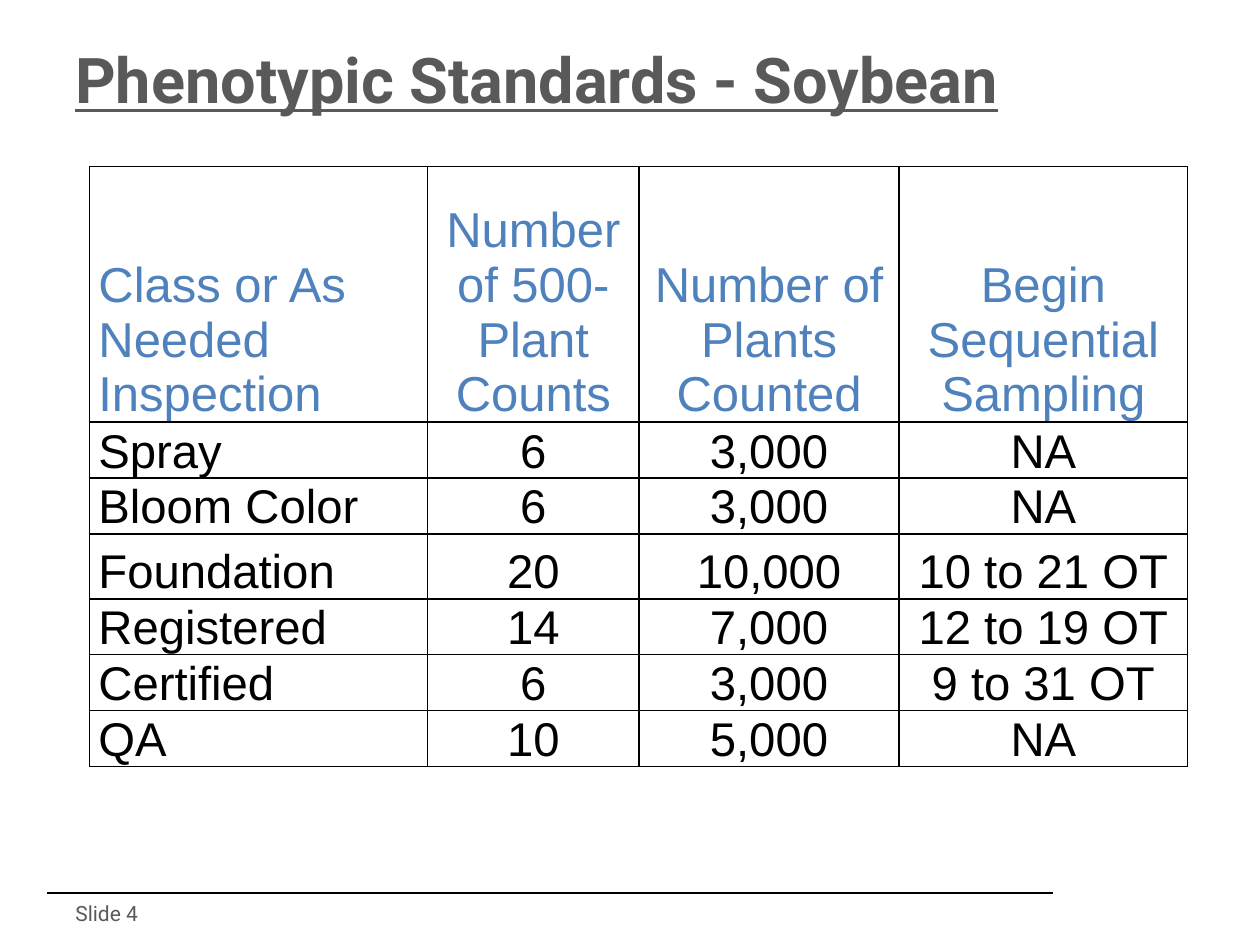
"""Build the soybean phenotypic standards slide."""
from dataclasses import dataclass

import lxml.etree
import pptx
import pptx.dml.color
import pptx.enum.shapes
import pptx.enum.text
import pptx.oxml.ns
import pptx.util

Pt = pptx.util.Pt
qn = pptx.oxml.ns.qn
ALIGN = pptx.enum.text.PP_ALIGN
ANCHOR = pptx.enum.text.MSO_ANCHOR
BLACK, GRAY, BLUE = "000000", "595959", "4F81BD"


@dataclass
class Style:
    font: str
    size: float
    color: str
    bold: bool = False
    underline: bool = False


@dataclass
class Label:
    text: str
    left: float
    top: float
    width: float
    height: float
    anchor: ANCHOR
    style: Style


@dataclass
class Row:
    height: float
    texts: tuple[str, ...]
    style: Style
    top_line: float = 1
    bottom_line: float = 1


HEADER = Style("Arial", 28, BLUE)
BODY = Style("Arial", 27, BLACK)
LABELS = [
    Label("Phenotypic Standards - Soybean", 36, 0, 648, 90, ANCHOR.MIDDLE,
          Style("Roboto", 36, GRAY, True, True)),
    Label("Slide 4", 36, 511.2, 72, 25.2, ANCHOR.TOP, Style("Roboto", 12, GRAY)),
]
COLUMNS = (193, 121, 148.5, 165)
ROWS = [
    Row(146, ("Class or As Needed Inspection", "Number of 500-Plant Counts",
              "Number of Plants Counted", "Begin Sequential Sampling"), HEADER, 1, 1.5),
    Row(32, ("Spray", "6", "3,000", "NA"), BODY, 1.5),
    Row(32, ("Bloom Color", "6", "3,000", "NA"), BODY),
    Row(37, ("Foundation", "20", "10,000", "10 to 21 OT"), BODY),
    Row(32, ("Registered", "14", "7,000", "12 to 19 OT"), BODY),
    Row(32, ("Certified", "6", "3,000", "9 to 31 OT"), BODY),
    Row(32, ("QA", "10", "5,000", "NA"), BODY),
]


def rgb(color: str) -> pptx.dml.color.RGBColor:
    return pptx.dml.color.RGBColor.from_string(color)


def write(tf, text: str, style: Style, align: ALIGN = ALIGN.LEFT) -> None:
    tf.text = text
    tf.word_wrap = True
    p = tf.paragraphs[0]
    p.alignment = align
    font = p.runs[0].font
    font.name, font.size = style.font, Pt(style.size)
    font.bold, font.underline = style.bold, style.underline
    font.color.rgb = rgb(style.color)


def add_label(s, label: Label) -> None:
    sp = s.shapes.add_textbox(Pt(label.left), Pt(label.top), Pt(label.width), Pt(label.height))
    write(sp.text_frame, label.text, label.style)
    sp.text_frame.vertical_anchor = label.anchor


def set_borders(cell, row: Row) -> None:
    tcPr = cell._tc.get_or_add_tcPr()
    widths = {"a:lnL": 1, "a:lnR": 1, "a:lnT": row.top_line, "a:lnB": row.bottom_line}
    for i, (tag, width) in enumerate(widths.items()):
        ln = lxml.etree.Element(qn(tag), w=str(Pt(width)))
        fill = lxml.etree.SubElement(ln, qn("a:solidFill"))
        lxml.etree.SubElement(fill, qn("a:srgbClr"), val=BLACK)
        tcPr.insert(i, ln)


def add_standards(s, left: float, top: float) -> None:
    height = sum(row.height for row in ROWS)
    table = s.shapes.add_table(len(ROWS), len(COLUMNS), Pt(left), Pt(top),
                               Pt(sum(COLUMNS)), Pt(height)).table
    table.first_row = table.horz_banding = False
    for column, width in zip(table.columns, COLUMNS):
        column.width = Pt(width)
    for i, row in enumerate(ROWS):
        table.rows[i].height = Pt(row.height)
        for j, text in enumerate(row.texts):
            cell = table.cell(i, j)
            cell.margin_left = cell.margin_right = Pt(5)
            cell.margin_top = cell.margin_bottom = Pt(0)
            cell.vertical_anchor = ANCHOR.BOTTOM
            write(cell.text_frame, text, row.style, ALIGN.CENTER if j else ALIGN.LEFT)
            cell.fill.background()
            set_borders(cell, row)


def add_rule(s, left: float, right: float, y: float) -> None:
    sp = s.shapes.add_connector(pptx.enum.shapes.MSO_CONNECTOR.STRAIGHT,
                                Pt(left), Pt(y), Pt(right), Pt(y))
    sp.line.color.rgb = rgb(BLACK)
    sp.line.width = Pt(1)
    lxml.etree.SubElement(sp._element.spPr, qn("a:effectLst"))


def main() -> None:
    prs = pptx.Presentation()
    prs.slide_width, prs.slide_height = Pt(720), Pt(540)
    s = prs.slides.add_slide(prs.slide_layouts[6])
    add_rule(s, 27, 601.5, 510.5)
    add_standards(s, 51.25, 95.25)
    for label in LABELS:
        add_label(s, label)
    prs.save("out.pptx")


if __name__ == "__main__":
    main()
